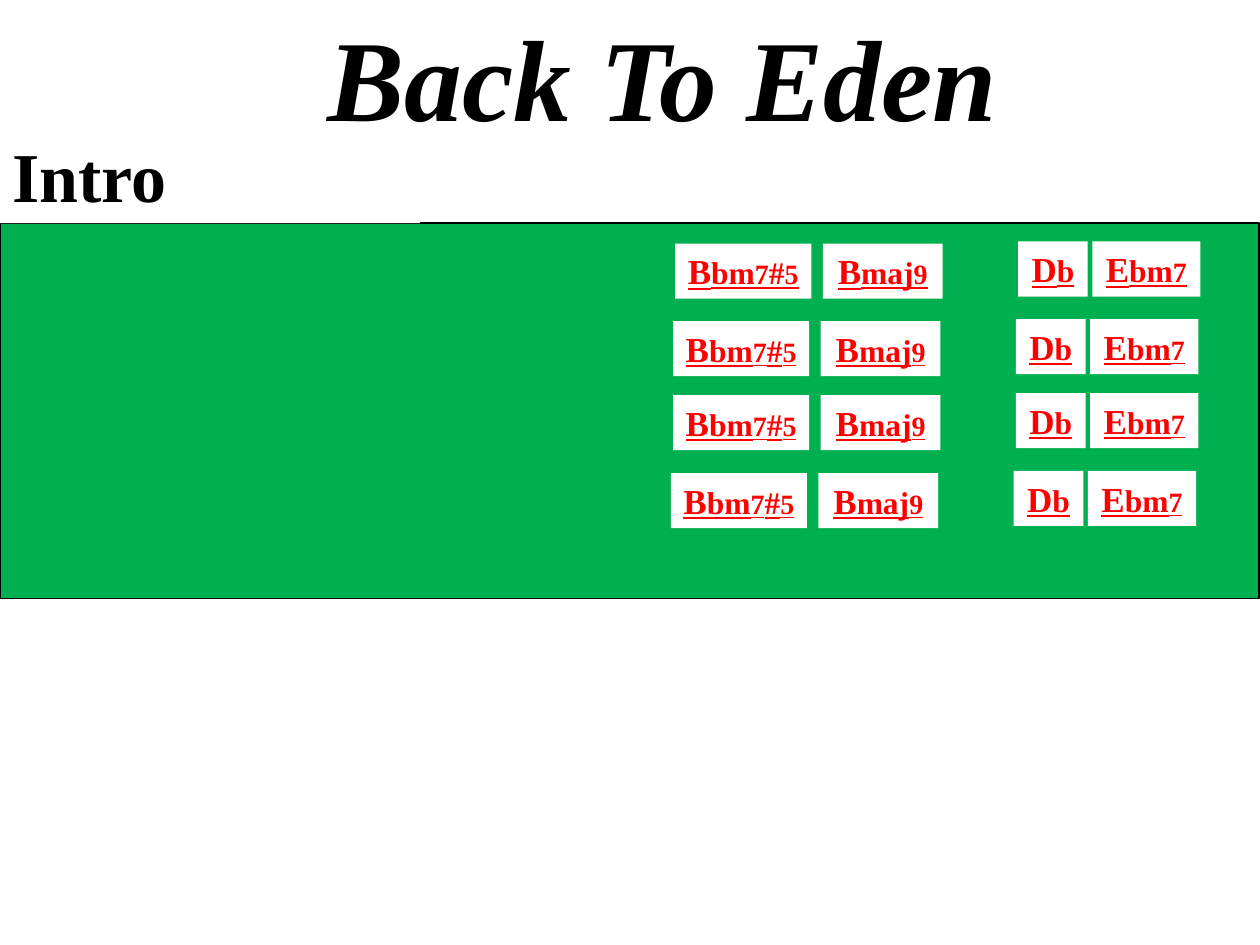
from lxml.etree import SubElement
from pptx import Presentation
from pptx.dml.color import RGBColor
from pptx.enum.shapes import MSO_SHAPE
from pptx.enum.text import MSO_ANCHOR, MSO_AUTO_SIZE, PP_ALIGN
from pptx.oxml.ns import qn
from pptx.util import Pt

COLORS = {"paper": "FFFFFF", "ink": "000000", "band": "00B050", "chord": "FF0000"}
FONT = "Times New Roman"

# Each chord: left offset in its row, width, drop from the row top, (text, size) runs
CHORDS = [
    (0, 77.8, 0, [("B", 20), ("bm", 18), ("7", 16), ("#", 18), ("5", 16)]),
    (84.4, 68.4, 0, [("B", 20), ("maj", 18), ("9", 16)]),
    (196, 39.8, -1.2, [("D", 20), ("b", 18)]),
    (238.4, 61.8, -1.2, [("E", 20), ("bm", 18), ("7", 16)]),
]
CHORD_HEIGHT = 31.5
ROW_ORIGINS = [(385.8, 139.2), (384.6, 183.5), (384.6, 225.8), (383.3, 270.3)]


def paint(shape, color):
    shape.fill.solid()
    shape.fill.fore_color.rgb = RGBColor.from_string(COLORS[color])


def write_text(shape, runs, color="ink", align=PP_ALIGN.LEFT, wrap=True,
               italic=False, underline=False):
    """Fill a shape with one bold paragraph of (text, size) runs."""
    frame = shape.text_frame
    frame.word_wrap = wrap
    frame.auto_size = MSO_AUTO_SIZE.SHAPE_TO_FIT_TEXT
    frame.vertical_anchor = MSO_ANCHOR.TOP
    para = frame.paragraphs[0]
    para.alignment = align
    para.space_before = Pt(0)
    spacing = para._p.pPr.find(qn("a:spcBef"))
    spacing.clear()
    SubElement(spacing, qn("a:spcPct"), val="50000")
    for text, size in runs:
        span = para.add_run()
        span.text = text
        span.font.name = FONT
        span.font.size = Pt(size)
        span.font.bold = True
        span.font.italic = italic
        span.font.underline = underline
        span.font.color.rgb = RGBColor.from_string(COLORS[color])


def add_label(page, left, top, width, height, runs, **text_format):
    box = page.shapes.add_textbox(Pt(left), Pt(top), Pt(width), Pt(height))
    paint(box, "paper")
    write_text(box, runs, **text_format)


def place_title(page, left, top, width, height):
    title = page.shapes.title
    title.left, title.top = Pt(left), Pt(top)
    title.width, title.height = Pt(width), Pt(height)
    paint(title, "paper")
    write_text(title, [("Back To Eden", 66)], italic=True)


def add_band(page, left, top, width, height):
    band = page.shapes.add_shape(MSO_SHAPE.RECTANGLE, Pt(left), Pt(top),
                                 Pt(width), Pt(height))
    band.shadow.inherit = False
    paint(band, "band")
    band.line.color.rgb = RGBColor.from_string(COLORS["ink"])
    band.line.width = Pt(0.75)


def add_chord_row(page, left, top):
    for offset, width, drop, runs in CHORDS:
        add_label(page, left + offset, top + drop, width, CHORD_HEIGHT, runs,
                  color="chord", align=PP_ALIGN.CENTER, wrap=False, underline=True)


def main():
    deck = Presentation()
    deck.slide_width, deck.slide_height = Pt(720), Pt(540)
    page = deck.slides.add_slide(deck.slide_layouts[5])
    place_title(page, 180, 0, 548, 87.2)
    add_band(page, 0, 127.5, 719.5, 214.5)
    add_label(page, 0, 72, 240, 55.6, [("Intro", 40)])
    for left, top in ROW_ORIGINS:
        add_chord_row(page, left, top)
    deck.save("out.pptx")


if __name__ == "__main__":
    main()
